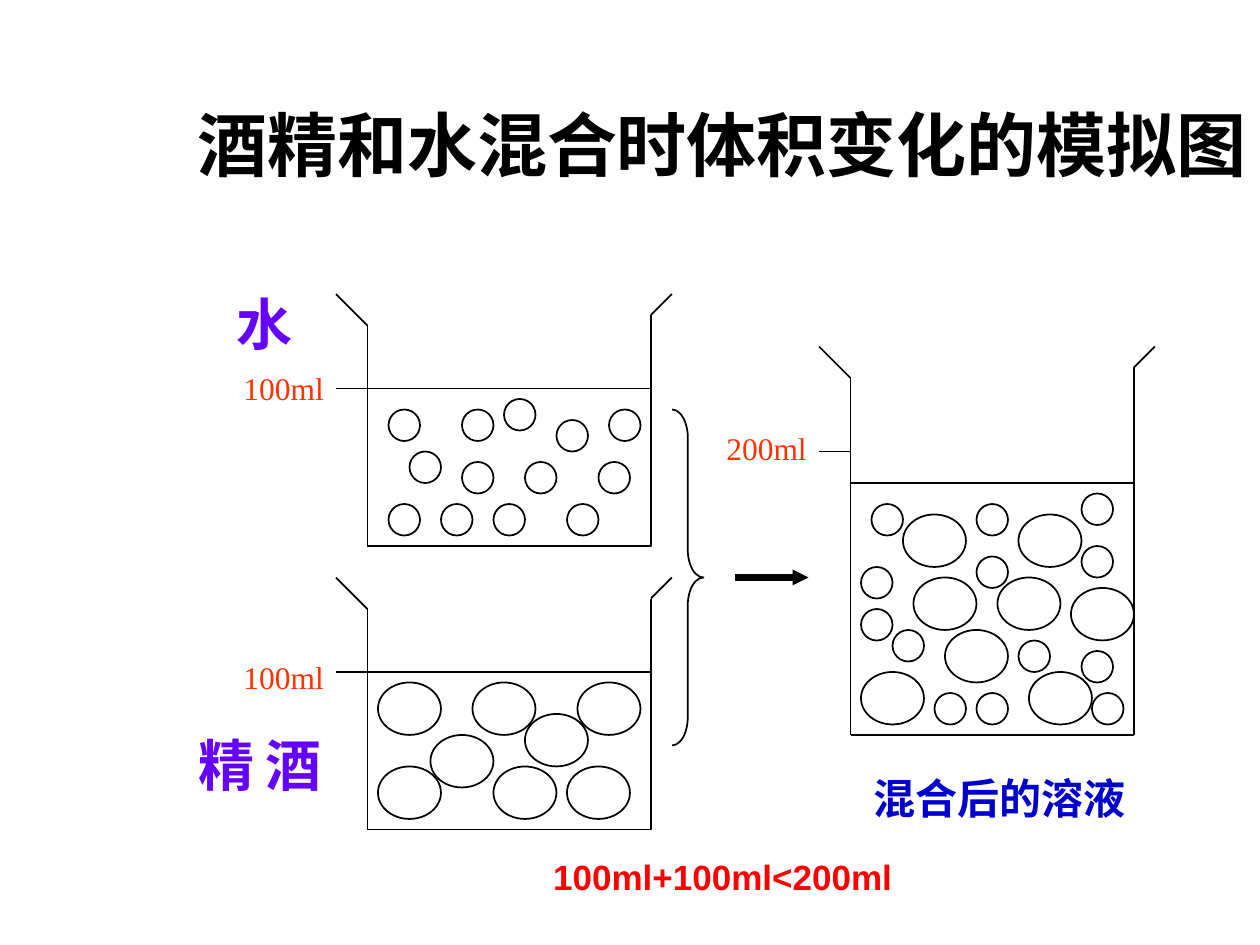
import dataclasses
import lxml.etree
import pptx
import pptx.dml.color
import pptx.enum.shapes
import pptx.enum.text
import pptx.oxml.ns
import pptx.util

Pt = pptx.util.Pt
Form = pptx.enum.shapes.MSO_SHAPE
Text = pptx.enum.text
qn = pptx.oxml.ns.qn


@dataclasses.dataclass(frozen=True)
class Theme:
    ink: str = "000000"
    violet: str = "6600FF"
    orange: str = "FF3300"
    blue: str = "0000CC"
    red: str = "FF0000"
    sans: str = "Arial"
    serif: str = "Times New Roman"
    title: int = 40
    name: int = 32
    result: int = 24
    sum: int = 20
    mark: int = 18
    thin: float = 1
    thick: float = 4.5


class Board:
    def __init__(self, slide, theme):
        self.shapes = slide.shapes
        self.theme = theme

    def tint(self, code):
        return pptx.dml.color.RGBColor.from_string(code)

    def outline(self, shape):
        shape.shadow.inherit = False
        shape.fill.background()
        shape.line.color.rgb = self.tint(self.theme.ink)
        shape.line.width = Pt(self.theme.thin)

    def shape(self, form, x, y, w, h):
        shape = self.shapes.add_shape(form, Pt(x), Pt(y), Pt(w), Pt(h))
        self.outline(shape)
        return shape

    def line(self, x1, y1, x2, y2, width=None, arrow=False):
        line = self.shapes.add_connector(
            pptx.enum.shapes.MSO_CONNECTOR.STRAIGHT, Pt(x1), Pt(y1), Pt(x2), Pt(y2))
        line.line.color.rgb = self.tint(self.theme.ink)
        line.line.width = Pt(width or self.theme.thin)
        props = line.element.spPr
        if arrow:
            lxml.etree.SubElement(props.find(qn("a:ln")), qn("a:tailEnd"),
                                  type="triangle", w="sm", len="sm")
        lxml.etree.SubElement(props, qn("a:effectLst"))

    def lip(self, x, y, dx, dy):
        pen = self.shapes.build_freeform(Pt(x), Pt(y))
        pen.add_line_segments([(Pt(x + dx), Pt(y + dy))], close=False)
        self.outline(pen.convert_to_shape())

    def beaker(self, left, top, base):
        right = left + 162
        self.line(left, top, left, base)
        self.line(left, base, right, base)
        self.line(right, base, right, top - 6)
        self.lip(left, top, -18, -18)
        self.lip(right, top - 6, 12, -12)

    def drops(self, spots, w, h):
        for x, y in spots:
            self.shape(Form.OVAL, x, y, w, h)

    def text(self, words, x, y, w, h, size, color, font=None, bold=True,
             wrap=True, down=False, center=False):
        box = self.shapes.add_textbox(Pt(x), Pt(y), Pt(w), Pt(h))
        frame = box.text_frame
        frame.text = words
        frame.word_wrap = wrap
        if down:
            frame._txBody.bodyPr.set("vert", "eaVert")
        if center:
            frame.vertical_anchor = Text.MSO_ANCHOR.MIDDLE
            frame.paragraphs[0].alignment = Text.PP_ALIGN.CENTER
        else:
            frame.auto_size = Text.MSO_AUTO_SIZE.SHAPE_TO_FIT_TEXT
        style = frame.paragraphs[0].runs[0].font
        style.name = font or self.theme.serif
        style.size = Pt(size)
        style.bold = bold
        style.color.rgb = self.tint(color)


WATER = [(222, 234), (300, 264), (264, 264), (222, 288), (318, 240),
         (234, 258), (252, 288), (282, 288), (342, 264), (264, 234),
         (288, 228), (324, 288), (348, 234)]
SPIRIT = [(216, 390), (282, 438), (330, 390), (324, 438),
          (216, 438), (270, 390), (246, 420), (300, 408)]
MIX_SMALL = [(498, 288), (492, 324), (558, 288), (492, 348), (534, 396),
             (618, 372), (618, 312), (624, 396), (558, 396), (558, 318),
             (582, 366), (510, 360), (618, 282)]
MIX_LARGE = [(588, 384), (582, 294), (516, 294), (492, 384),
             (570, 330), (540, 360), (612, 336), (522, 330)]
SMALL = (18, 18)
LARGE = (36, 30)


def main():
    deck = pptx.Presentation()
    deck.slide_width, deck.slide_height = Pt(720), Pt(540)
    theme = Theme()
    board = Board(deck.slides.add_slide(deck.slide_layouts[6]), theme)

    board.text("酒精和水混合时体积变化的模拟图", 90.7, 24.5, 643.7, 115.2,
               theme.title, theme.ink, theme.sans, center=True)

    for top in (186, 348):
        board.shape(Form.RECTANGLE, 210, top + 36, 162, 90)
        board.beaker(210, top, top + 126)
    board.drops(WATER, *SMALL)
    board.drops(SPIRIT, *LARGE)
    board.text("水", 120, 162, 52.6, 38.9, theme.name, theme.violet,
               wrap=False, down=True)
    board.text("酒精", 136.8, 414, 52.6, 72, theme.name, theme.violet, down=True)

    board.beaker(486, 216, 420)
    board.line(486, 276, 648, 276)
    board.drops(MIX_SMALL, *SMALL)
    board.drops(MIX_LARGE, *LARGE)

    for x1, x2, y in ((192, 222, 222), (192, 240, 384), (468, 486, 258)):
        board.line(x1, y, x2, y)
    for words, x, y in (("100ml", 132, 207.4), ("100ml", 132, 372.4),
                        ("200ml", 408, 241.4)):
        board.text(words, x, y, 60.5, 28.8, theme.mark, theme.orange,
                   bold=False, wrap=False)

    brace = board.shape(Form.RIGHT_BRACE, 384, 234, 18, 192)
    brace.adjustments[0] = 0.89
    board.line(420, 330, 462, 330, theme.thick, arrow=True)
    board.text("混合后的溶液", 492, 438, 186, 36, theme.result, theme.blue)
    board.text("100ml+100ml<200ml", 309, 485.3, 232.6, 31, theme.sum,
               theme.red, theme.sans)
    deck.save("out.pptx")


if __name__ == "__main__":
    main()
